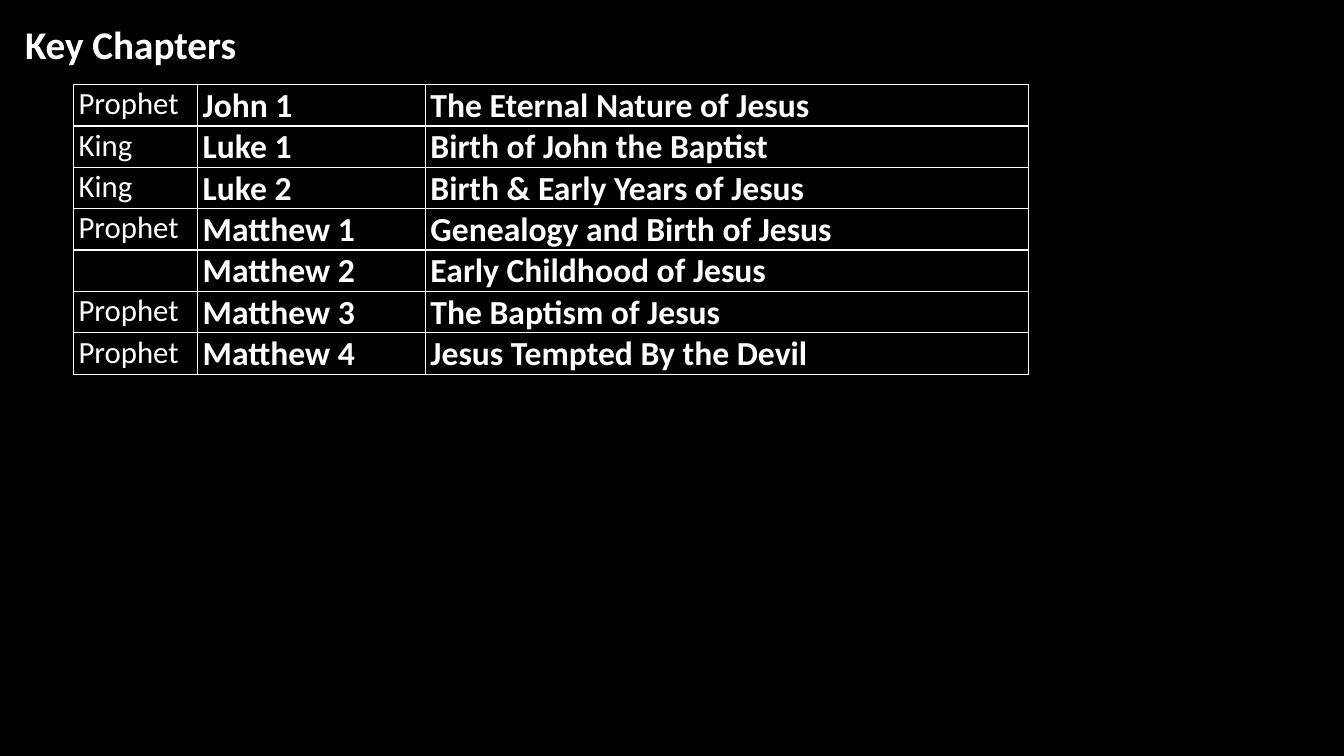
import pptx
import pptx.dml.color
import pptx.enum.text
import pptx.oxml
import pptx.oxml.ns
import pptx.util

COLORS = {"background": "000000", "ink": "FFFFFF"}
FONT = "Calibri"
COLUMN_WIDTHS = (1.23, 2.26, 5.98)
ROW_HEIGHT = 0.41
CHAPTERS = (
    ("Prophet", "John 1", "The Eternal Nature of Jesus"),
    ("King", "Luke 1", "Birth of John the Baptist"),
    ("King", "Luke 2", "Birth & Early Years of Jesus"),
    ("Prophet", "Matthew 1", "Genealogy and Birth of Jesus"),
    ("", "Matthew 2", "Early Childhood of Jesus"),
    ("Prophet", "Matthew 3", "The Baptism of Jesus"),
    ("Prophet", "Matthew 4", "Jesus Tempted By the Devil"),
)


def rgb(name):
    return pptx.dml.color.RGBColor.from_string(COLORS[name])


def write(frame, text, size, bold):
    para = frame.paragraphs[0]
    para.text = text
    para.font.name = FONT
    para.font.size = pptx.util.Pt(size)
    para.font.bold = bold
    para.font.color.rgb = rgb("ink")


def set_margins(cell):
    cell.margin_left = pptx.util.Inches(0.05)
    cell.margin_top = cell.margin_right = pptx.util.Inches(0.01)
    cell.margin_bottom = 0


def outline(cell):
    """Draw a one-point line on all four sides of the cell."""
    properties = cell._tc.get_or_add_tcPr()
    for side in ("lnL", "lnR", "lnT", "lnB"):
        properties.append(pptx.oxml.parse_xml(
            f'<a:{side} {pptx.oxml.ns.nsdecls("a")} w="{pptx.util.Pt(1)}">'
            f'<a:solidFill><a:srgbClr val="{COLORS["ink"]}"/></a:solidFill>'
            f'</a:{side}>'))


def add_title(page, left, top, width, height):
    box = page.shapes.add_textbox(*map(pptx.util.Inches, (left, top, width, height)))
    box.text_frame.word_wrap = True
    box.text_frame.auto_size = pptx.enum.text.MSO_AUTO_SIZE.SHAPE_TO_FIT_TEXT
    write(box.text_frame, "Key Chapters", 28, True)


def add_chapter_table(page, left, top):
    size = (sum(COLUMN_WIDTHS), ROW_HEIGHT * len(CHAPTERS))
    table = page.shapes.add_table(
        len(CHAPTERS), len(COLUMN_WIDTHS),
        *map(pptx.util.Inches, (left, top, *size))).table
    table.first_row = False
    table.horz_banding = False
    for column, width in zip(table.columns, COLUMN_WIDTHS):
        column.width = pptx.util.Inches(width)
    for row, chapter in zip(table.rows, CHAPTERS):
        row.height = pptx.util.Inches(ROW_HEIGHT)
        for index, (cell, text) in enumerate(zip(row.cells, chapter)):
            set_margins(cell)
            outline(cell)
            cell.fill.background()
            is_role = index == 0
            write(cell.text_frame, text, 22 if is_role else 24, not is_role)


def main():
    deck = pptx.Presentation()
    deck.slide_width = pptx.util.Inches(13.33)
    deck.slide_height = pptx.util.Inches(7.5)
    page = deck.slides.add_slide(deck.slide_layouts[6])
    page.background.fill.solid()
    page.background.fill.fore_color.rgb = rgb("background")
    add_title(page, 0.15, 0.15, 11.66, 0.57)
    add_chapter_table(page, 0.73, 0.84)
    deck.save("out.pptx")


if __name__ == "__main__":
    main()
